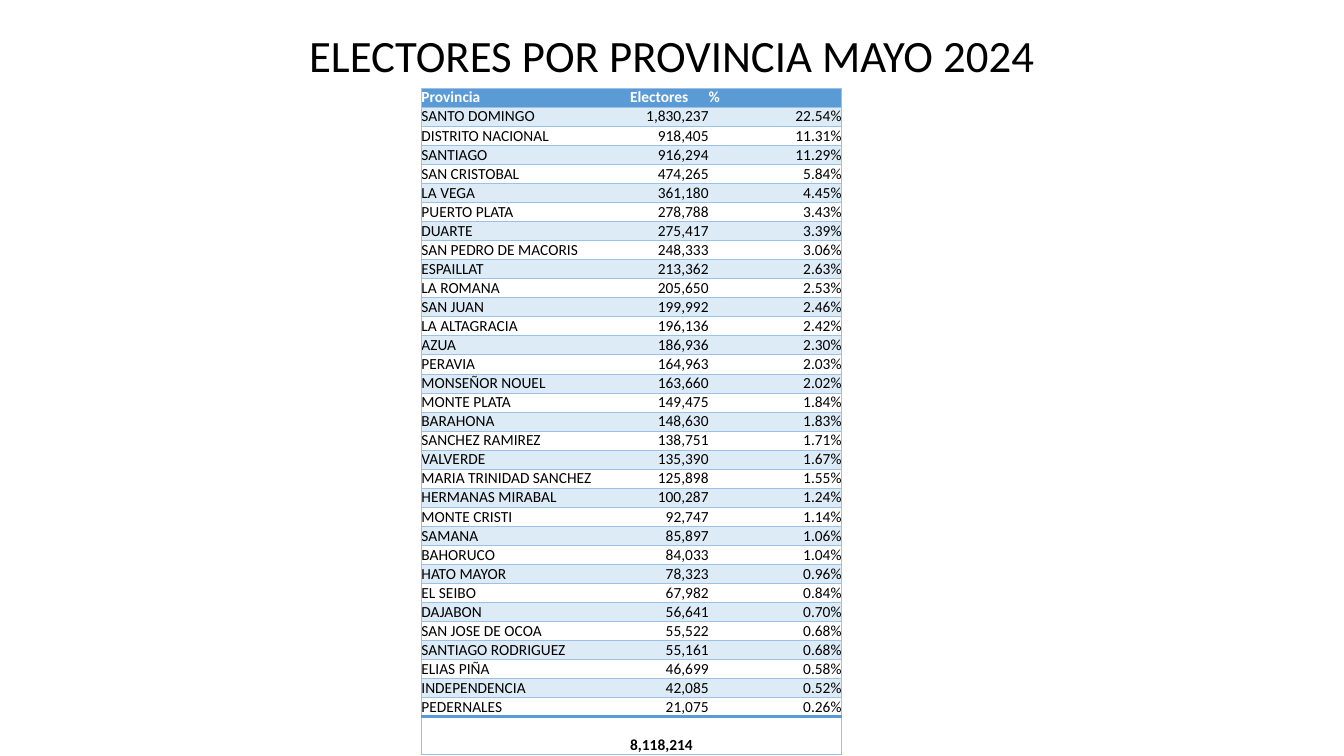
import pptx
import pptx.dml.color
import pptx.enum.text
import pptx.oxml
import pptx.oxml.ns
import pptx.util
from pptx.util import Cm

FONT = "Calibri"
BLUE, LIGHT, PALE = "5B9BD5", "9BC2E6", "DDEBF7"
BLACK, WHITE = "000000", "FFFFFF"
PLAIN = "{2D5ABB26-0587-4C30-8999-92F81FD0307C}"  # table style without grid
LEFT = pptx.enum.text.PP_ALIGN.LEFT
RIGHT = pptx.enum.text.PP_ALIGN.RIGHT

HEAD = ("Provincia", "Electores", "%")
TOTAL = ("", "8,118,214", "")
VOTERS = [
    ("SANTO DOMINGO", "1,830,237", "22.54%"),
    ("DISTRITO NACIONAL", "918,405", "11.31%"),
    ("SANTIAGO", "916,294", "11.29%"),
    ("SAN CRISTOBAL", "474,265", "5.84%"),
    ("LA VEGA", "361,180", "4.45%"),
    ("PUERTO PLATA", "278,788", "3.43%"),
    ("DUARTE", "275,417", "3.39%"),
    ("SAN PEDRO DE MACORIS", "248,333", "3.06%"),
    ("ESPAILLAT", "213,362", "2.63%"),
    ("LA ROMANA", "205,650", "2.53%"),
    ("SAN JUAN", "199,992", "2.46%"),
    ("LA ALTAGRACIA", "196,136", "2.42%"),
    ("AZUA", "186,936", "2.30%"),
    ("PERAVIA", "164,963", "2.03%"),
    ("MONSEÑOR NOUEL", "163,660", "2.02%"),
    ("MONTE PLATA", "149,475", "1.84%"),
    ("BARAHONA", "148,630", "1.83%"),
    ("SANCHEZ RAMIREZ", "138,751", "1.71%"),
    ("VALVERDE", "135,390", "1.67%"),
    ("MARIA TRINIDAD SANCHEZ", "125,898", "1.55%"),
    ("HERMANAS MIRABAL", "100,287", "1.24%"),
    ("MONTE CRISTI", "92,747", "1.14%"),
    ("SAMANA", "85,897", "1.06%"),
    ("BAHORUCO", "84,033", "1.04%"),
    ("HATO MAYOR", "78,323", "0.96%"),
    ("EL SEIBO", "67,982", "0.84%"),
    ("DAJABON", "56,641", "0.70%"),
    ("SAN JOSE DE OCOA", "55,522", "0.68%"),
    ("SANTIAGO RODRIGUEZ", "55,161", "0.68%"),
    ("ELIAS PIÑA", "46,699", "0.58%"),
    ("INDEPENDENCIA", "42,085", "0.52%"),
    ("PEDERNALES", "21,075", "0.26%"),
]


def paint(target, color):
    """Set a solid fill, or none when color is None."""
    if color is None:
        target.background()
    else:
        target.solid()
        target.fore_color.rgb = pptx.dml.color.RGBColor.from_string(color)


def add_run(para, text, size, color, bold=False):
    run = para.add_run()
    run.text = text
    run.font.name = FONT
    run.font.size = pptx.util.Pt(size)
    run.font.bold = bold
    paint(run.font.fill, color)


def add_title(slide, text):
    title = slide.shapes.title
    title.left, title.top = Cm(2.33), Cm(0.69)
    title.width, title.height = Cm(29.21), Cm(1.55)
    frame = title.text_frame
    frame.auto_size = pptx.enum.text.MSO_AUTO_SIZE.NONE
    frame.vertical_anchor = pptx.enum.text.MSO_ANCHOR.MIDDLE
    para = frame.paragraphs[0]
    para.alignment = pptx.enum.text.PP_ALIGN.CENTER
    para.line_spacing = 0.9
    add_run(para, text, 32, BLACK)


def add_edge(cell, side, color, width):
    """Draw one cell border; side is L, R, T or B."""
    edge = pptx.oxml.parse_xml(
        f'<a:ln{side} {pptx.oxml.ns.nsdecls("a")} w="{pptx.util.Pt(width)}">'
        f'<a:solidFill><a:srgbClr val="{color}"/></a:solidFill></a:ln{side}>'
    )
    cell._tc.get_or_add_tcPr().append(edge)


def fill_cell(cell, text, align, color, bold, back, edges):
    cell.margin_left = cell.margin_right = 0
    cell.margin_top = cell.margin_bottom = 0
    cell.vertical_anchor = pptx.enum.text.MSO_ANCHOR.BOTTOM
    # Borders come before the fill in the cell properties
    for side, (shade, width) in edges.items():
        add_edge(cell, side, shade, width)
    paint(cell.fill, back)
    para = cell.text_frame.paragraphs[0]
    para.alignment = align
    if text:
        add_run(para, text, 11, color, bold)


def add_grid(slide):
    rows = [HEAD, *VOTERS, TOTAL]
    widths = (5.26, 1.98, 3.35)
    heights = [0.48] * (len(rows) - 1) + [0.96]
    last = len(rows) - 1
    frame = slide.shapes.add_table(
        len(rows), len(widths), Cm(10.62), Cm(2.22),
        Cm(sum(widths)), Cm(sum(heights)))
    grid = frame.table
    grid.horz_banding = False
    grid._tbl.tblPr.find(pptx.oxml.ns.qn("a:tableStyleId")).text = PLAIN
    for col, width in zip(grid.columns, widths):
        col.width = Cm(width)

    thin, thick = (LIGHT, 0.5), (BLUE, 2)
    for i, row in enumerate(rows):
        grid.rows[i].height = Cm(heights[i])
        head, total = i == 0, i == last
        back = BLUE if head else PALE if i % 2 and not total else None
        for j, text in enumerate(row):
            # Outer sides, row lines and a thick line above the total
            edges = {}
            if j == 0:
                edges["L"] = thin
            if j == len(row) - 1:
                edges["R"] = thin
            edges["T"] = thick if total else thin
            edges["B"] = thick if i == last - 1 else thin
            align = LEFT if head or total or j == 0 else RIGHT
            fill_cell(grid.cell(i, j), text, align,
                      WHITE if head else BLACK, head or total, back, edges)


def main():
    deck = pptx.Presentation()
    deck.slide_width, deck.slide_height = Cm(33.87), Cm(19.05)
    slide = deck.slides.add_slide(deck.slide_layouts[5])
    add_title(slide, "ELECTORES POR PROVINCIA MAYO 2024")
    add_grid(slide)
    deck.save("out.pptx")


if __name__ == "__main__":
    main()
